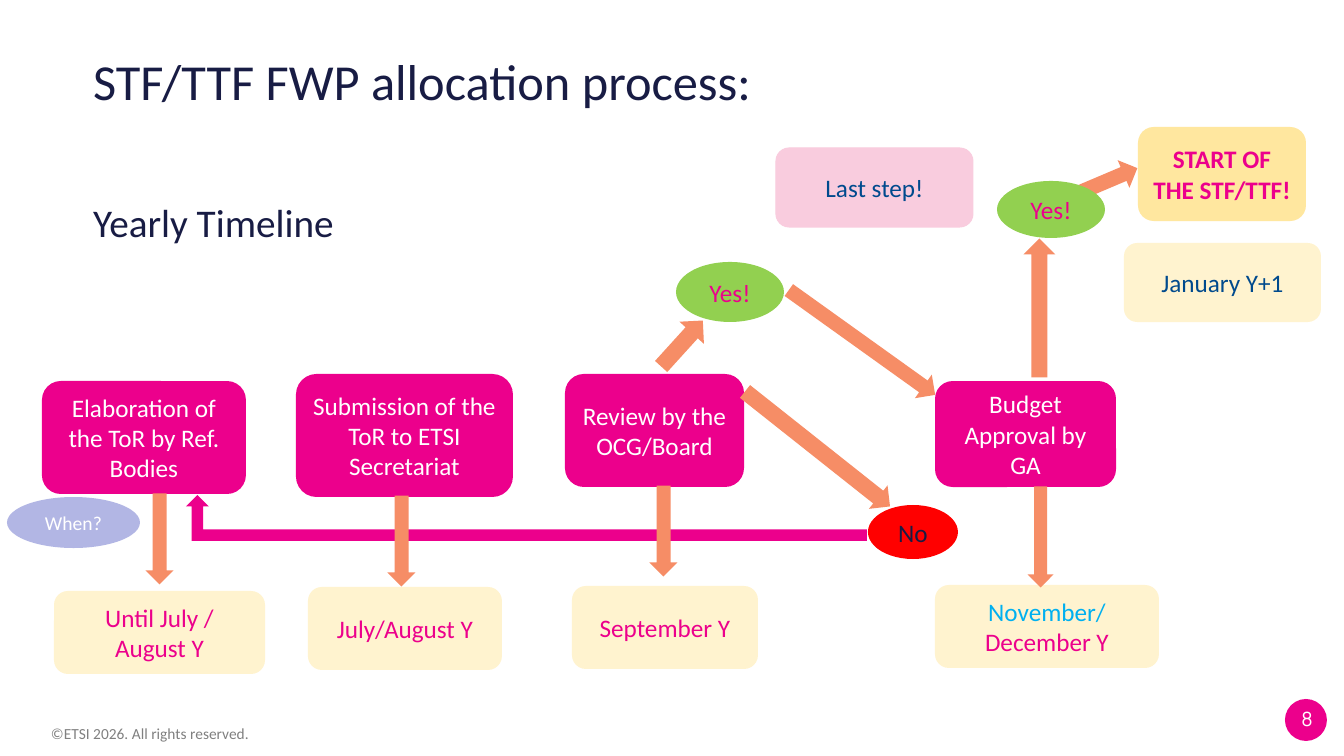
from pptx import Presentation
from pptx.dml.color import RGBColor
from pptx.enum.shapes import MSO_SHAPE as SHAPE
from pptx.enum.text import MSO_ANCHOR as ANCHOR, MSO_AUTO_SIZE as AUTO, PP_ALIGN as ALIGN
from pptx.util import Pt

EMU_PER_PX = 914400 / 100.8
MAGENTA, ORANGE, GREEN, CREAM = "EC008C", "F68D66", "92D050", "FFF3CF"
NAVY, BLUE, WHITE, PINK = "181C44", "004A8D", "FFFFFF", "F9CCDE"

STEPS = [
    ("Elaboration of the ToR by Ref. Bodies", (42, 381, 204, 113)),
    ("Submission of the ToR to ETSI Secretariat", (296, 374, 217, 123)),
    ("Review by the OCG/Board", (565, 374, 179, 113)),
    ("Budget Approval by GA", (935, 381, 181, 106)),
]
DATES = [
    ([("Until July / August Y", MAGENTA)], (54, 591, 211, 83)),
    ([("July/August Y", MAGENTA)], (308, 587, 194, 83)),
    ([("September Y", MAGENTA)], (572, 586, 186, 83)),
    ([("November/ ", "00B0F0"), ("December Y", MAGENTA)], (935, 585, 224, 83)),
    ([("January Y+1", BLUE)], (1124, 243, 197, 79)),
]
DATE_ARROWS = [(114, 525, 91, 28), (356, 527, 91, 28), (618, 517, 91, 28), (990, 524, 101, 26)]


def px(*lengths):
    return [round(n * EMU_PER_PX) for n in lengths]


def rgb(color):
    return RGBColor.from_string(color)


def set_font(p, size, name="Calibri", bold=False):
    p.font.size = Pt(size)
    p.font.name = name
    p.font.bold = bold


def add_figure(s, kind, box, fill):
    sp = s.shapes.add_shape(kind, *px(*box))
    sp.shadow.inherit = False
    sp.fill.solid()
    sp.fill.fore_color.rgb = rgb(fill)
    sp.line.fill.background()
    return sp


def add_node(s, kind, box, fill, runs, size=18, bold=False):
    sp = add_figure(s, kind, box, fill)
    tf = sp.text_frame
    tf.word_wrap = True
    tf.vertical_anchor = ANCHOR.MIDDLE
    p = tf.paragraphs[0]
    p.alignment = ALIGN.CENTER
    set_font(p, size, bold=bold)
    for text, color in runs:
        r = p.add_run()
        r.text = text
        r.font.color.rgb = rgb(color)
    return sp


def add_arrow(s, box, angle):
    sp = add_figure(s, SHAPE.RIGHT_ARROW, box, ORANGE)
    sp.rotation = angle
    return sp


def add_label(s, box, text, size, color, anchor, align=ALIGN.LEFT, name="Calibri"):
    tf = s.shapes.add_textbox(*px(*box)).text_frame
    tf.word_wrap = True
    tf.vertical_anchor = anchor
    p = tf.paragraphs[0]
    p.text = text
    p.alignment = align
    set_font(p, size, name)
    p.font.color.rgb = rgb(color)


def set_title(s):
    title = s.shapes.title
    title.left, title.top, title.width, title.height = px(83, 37, 686, 126)
    tf = title.text_frame
    tf.text = "STF/TTF FWP allocation process:\nYearly Timeline"
    tf.word_wrap = True
    tf.auto_size = AUTO.NONE
    tf.vertical_anchor = ANCHOR.TOP
    for p, size, gap in zip(tf.paragraphs, (36, 28), (0, 58)):
        p.alignment = ALIGN.LEFT
        p.line_spacing = 1.14
        p.space_before = Pt(gap)
        set_font(p, size)
        p.font.color.rgb = rgb(NAVY)


def add_return_arrow(s):
    sp = add_figure(s, SHAPE.BENT_UP_ARROW, (186, 495, 681, 46), MAGENTA)
    sp._element.spPr.get_or_add_xfrm().set("flipH", "1")


def main():
    prs = Presentation()
    prs.slide_width, prs.slide_height = px(1344, 756)
    s = prs.slides.add_slide(prs.slide_layouts[5])

    add_label(s, (41, 719, 243, 29), "©ETSI 2026. All rights reserved.", 11, "808080", ANCHOR.BOTTOM)
    add_figure(s, SHAPE.OVAL, (1285, 699, 42, 42), MAGENTA)
    add_label(s, (1275, 699, 64, 40), "8", 14, WHITE, ANCHOR.MIDDLE, ALIGN.CENTER, "Manrope")
    set_title(s)

    for text, box in STEPS:
        add_node(s, SHAPE.ROUNDED_RECTANGLE, box, MAGENTA, [(text, WHITE)])
    for runs, box in DATES:
        add_node(s, SHAPE.ROUNDED_RECTANGLE, box, CREAM, runs)

    add_arrow(s, (651, 327, 62, 33), 312.2)
    add_arrow(s, (1074, 166, 66, 30), 337)
    add_node(s, SHAPE.OVAL, (676, 262, 108, 60), GREEN, [("Yes!", MAGENTA)])
    add_arrow(s, (725, 434, 185, 30), 38.4).adjustments[0] = 0.54
    add_node(s, SHAPE.OVAL, (868, 505, 90, 54), "FF0000", [("No", NAVY)])
    add_return_arrow(s)
    add_node(s, SHAPE.ROUNDED_RECTANGLE, (1138, 127, 168, 94), "FFE79F",
             [("START OF THE STF/TTF!", MAGENTA)], bold=True)
    add_node(s, SHAPE.OVAL, (7, 497, 133, 51), "B2B6E4", [("When?", WHITE)], size=14)
    for box in DATE_ARROWS:
        add_arrow(s, box, 90)
    add_arrow(s, (772, 328, 180, 29), 35.6)
    add_node(s, SHAPE.OVAL, (997, 181, 108, 57), GREEN, [("Yes!", MAGENTA)])
    add_arrow(s, (970, 292, 139, 32), 270)
    last = add_node(s, SHAPE.ROUNDED_RECTANGLE, (776, 148, 197, 79), PINK, [("Last step!", BLUE)])
    last.line.color.rgb = rgb(PINK)
    last.line.width = Pt(0.75)

    prs.save("out.pptx")


if __name__ == "__main__":
    main()
